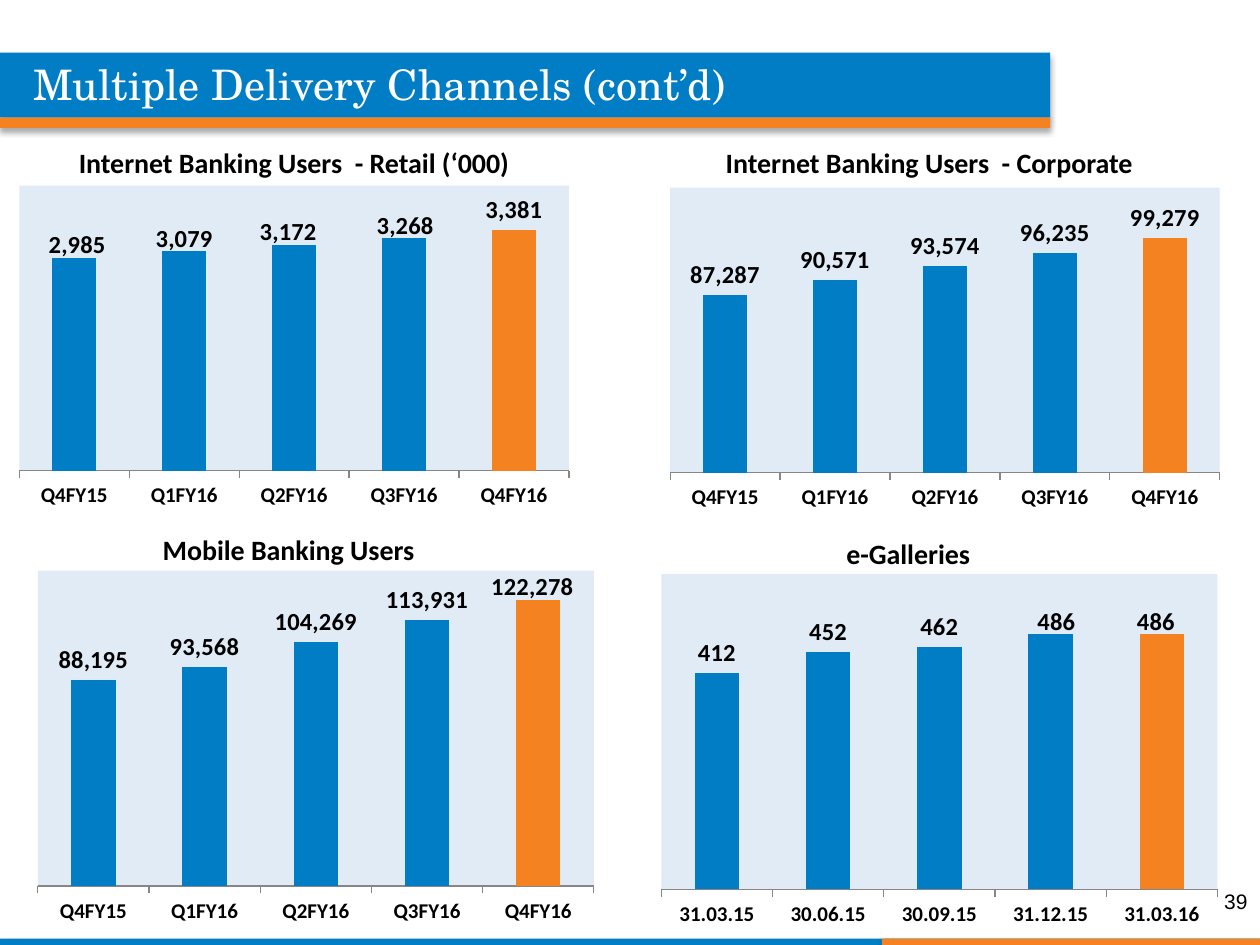
from dataclasses import dataclass

from lxml import etree
from pptx import Presentation
from pptx.chart.data import CategoryChartData
from pptx.dml.color import RGBColor
from pptx.enum.chart import XL_CHART_TYPE, XL_LABEL_POSITION, XL_TICK_MARK
from pptx.enum.shapes import MSO_SHAPE
from pptx.enum.text import MSO_ANCHOR, PP_ALIGN
from pptx.oxml import parse_xml
from pptx.oxml.ns import nsdecls, qn
from pptx.util import Cm, Pt

COLUMNS = XL_CHART_TYPE.COLUMN_CLUSTERED
OUTSIDE_END = XL_LABEL_POSITION.OUTSIDE_END
TICK_OUT, TICK_NONE = XL_TICK_MARK.OUTSIDE, XL_TICK_MARK.NONE
RECTANGLE = MSO_SHAPE.RECTANGLE
TOP, MIDDLE = MSO_ANCHOR.TOP, MSO_ANCHOR.MIDDLE
LEFT, CENTER, RIGHT = PP_ALIGN.LEFT, PP_ALIGN.CENTER, PP_ALIGN.RIGHT


@dataclass(frozen=True)
class Theme:
    blue: RGBColor = RGBColor(0x00, 0x7D, 0xC5)
    orange: RGBColor = RGBColor(0xF5, 0x82, 0x20)
    pale: str = "E0EBF6"
    axis: RGBColor = RGBColor(0x86, 0x86, 0x86)
    black: RGBColor = RGBColor(0, 0, 0)
    white: RGBColor = RGBColor(0xFF, 0xFF, 0xFF)
    title_font: str = "TeX Gyre Schola"
    body_font: str = "Calibri"
    number_font: str = "Arial"
    title_size: Pt = Pt(24)
    heading_size: Pt = Pt(16)
    chart_size: Pt = Pt(18)
    label_size: Pt = Pt(14)
    small_size: Pt = Pt(12)


theme = Theme()
NUMBER_FORMAT = '_ * #,##0_ ;_ * \\-#,##0_ ;_ * "-"??_ ;_ '
SHADOW = (
    f'<a:effectLst {nsdecls("a")}><a:outerShdw blurRad="44450" dist="27940" dir="5400000" '
    'algn="ctr" rotWithShape="0"><a:srgbClr val="000000"><a:alpha val="32000"/></a:srgbClr>'
    '</a:outerShdw></a:effectLst>'
)


def add_text(page, text, left, top, width, height, font, size, color, align, anchor, bold=False):
    box = page.shapes.add_textbox(Cm(left), Cm(top), Cm(width), Cm(height))
    box.text_frame.word_wrap = True
    box.text_frame.vertical_anchor = anchor
    paragraph = box.text_frame.paragraphs[0]
    paragraph.text = text
    paragraph.alignment = align
    paragraph.font.name = font
    paragraph.font.size = size
    paragraph.font.bold = bold
    paragraph.font.color.rgb = color


def make_layout(**values):
    """Manual chart layout; keyword names are the layout's child elements."""
    layout = parse_xml(f'<c:layout {nsdecls("c")}><c:manualLayout/></c:layout>')
    for name, value in values.items():
        etree.SubElement(layout[0], qn(f"c:{name}")).set("val", str(value))
    return layout


deck = Presentation()
deck.slide_width, deck.slide_height = Cm(25.4), Cm(19.05)
page = deck.slides.add_slide(deck.slide_layouts[6])

# Footer stripe and title banner
bars = [
    (0, 18.92, 25.4, 0.13, theme.blue),
    (17.78, 18.92, 7.62, 0.13, theme.orange),
    (0, 1.06, 21.17, 1.31, theme.blue),
    (0, 2.37, 21.17, 0.21, theme.orange),
]
for left, top, width, height, color in bars:
    bar = page.shapes.add_shape(RECTANGLE, Cm(left), Cm(top), Cm(width), Cm(height))
    bar.fill.solid()
    bar.fill.fore_color.rgb = color
    bar.line.fill.background()
    bar._element.spPr.append(parse_xml(SHADOW))

add_text(page, "Multiple Delivery Channels (cont’d)", 0.42, 1.06, 17.15, 1.27,
         theme.title_font, theme.title_size, theme.white, LEFT, TOP)

# Panels: heading box, chart box, plot area, value scale, data, label nudges
quarters = ["Q4FY15", "Q1FY16", "Q2FY16", "Q3FY16", "Q4FY16"]
dates = ["31.03.15", "30.06.15", "30.09.15", "31.12.15", "31.03.16"]
upper_plot = (0.033, 0.046, 0.935, 0.755)
lower_plot = (0.018, 0.109, 0.946, 0.751)
panels = [
    ("Internet Banking Users  - Retail (‘000)", (1.06, 2.75, 9.74, 1.06),
     (0, 3.39, 11.85, 7.62), upper_plot, (0, 4000, 1000),
     quarters, (2985, 3079, 3172, 3268, 3381),
     {0: (0.005, 0.02), 1: (0, 0.02), 2: (-0.01, 0.02), 3: (0.002, 0.023)}),
    ("Internet Banking Users  - Corporate", (13.55, 2.75, 10.37, 1.06),
     (13.12, 3.43, 11.85, 7.62), upper_plot, (50000, 110000, 10000),
     quarters, (87287, 90571, 93574, 96235, 99279), {}),
    ("Mobile Banking Users", (2.54, 10.64, 6.56, 0.85),
     (0.55, 10.58, 11.85, 8.47), lower_plot, (0, 135000, 50000),
     quarters, (88195, 93568, 104269, 113931, 122278), {4: (-0.01, 0.017)}),
    ("e-Galleries", (15.03, 10.72, 6.56, 0.85),
     (13.12, 10.65, 11.85, 8.47), lower_plot, (0, 600, 100),
     dates, (412, 452, 462, 486, 486), {3: (0.01, 0.02), 4: (-0.01, 0.02)}),
]

for heading, heading_box, chart_box, plot_box, scale, categories, values, nudges in panels:
    data = CategoryChartData(number_format=NUMBER_FORMAT)
    data.categories = categories
    data.add_series("Series 1", values)
    chart = page.shapes.add_chart(COLUMNS, *map(Cm, chart_box), data).chart
    chart.has_legend = False
    chart.has_title = False
    chart.font.name = theme.body_font
    chart.font.size = theme.chart_size
    chart.font.color.rgb = theme.black

    # Axes
    value_axis = chart.value_axis
    value_axis.minimum_scale, value_axis.maximum_scale, value_axis.major_unit = scale
    value_axis.has_major_gridlines = False
    value_axis.visible = False
    category_axis = chart.category_axis
    category_axis.major_tick_mark = TICK_OUT
    category_axis.minor_tick_mark = TICK_NONE
    category_axis.format.line.color.rgb = theme.axis
    category_axis.tick_labels.font.size = theme.small_size
    category_axis.tick_labels.font.bold = True

    # Columns, the latest one highlighted
    plot = chart.plots[0]
    plot.gap_width = 150
    plot.vary_by_categories = False
    series = plot.series[0]
    series.format.fill.solid()
    series.format.fill.fore_color.rgb = theme.blue
    latest = series.points[len(values) - 1].format.fill
    latest.solid()
    latest.fore_color.rgb = theme.orange

    # Value labels, some moved slightly
    labels = series.data_labels
    labels.show_value = True
    labels.position = OUTSIDE_END
    labels.number_format = NUMBER_FORMAT
    labels.number_format_is_linked = False
    labels.font.size = theme.label_size
    labels.font.bold = True
    for index, (shift_x, shift_y) in nudges.items():
        label = series.points[index].data_label
        label.font.size = theme.label_size
        label.font.bold = True
        label.position = OUTSIDE_END
        element = series._element.xpath(f"c:dLbls/c:dLbl[c:idx/@val='{index}']")[0]
        element.insert(1, make_layout(x=shift_x, y=shift_y))
        number = etree.Element(qn("c:numFmt"), formatCode=NUMBER_FORMAT, sourceLinked="0")
        element.insert(2, number)

    # Plot area position and background
    area = chart._chartSpace.chart.plotArea
    for old_layout in area.findall(qn("c:layout")):
        area.remove(old_layout)
    left, top, width, height = plot_box
    area.insert(0, make_layout(layoutTarget="inner", xMode="edge", yMode="edge",
                               x=left, y=top, w=width, h=height))
    area.append(parse_xml(
        f'<c:spPr {nsdecls("c", "a")}><a:solidFill><a:srgbClr val="{theme.pale}"/>'
        '</a:solidFill></c:spPr>'))
    chart._chartSpace.chart.addnext(parse_xml(
        f'<c:spPr {nsdecls("c", "a")}><a:noFill/><a:ln><a:noFill/></a:ln></c:spPr>'))

    add_text(page, heading, *heading_box, theme.body_font, theme.heading_size,
             theme.black, CENTER, MIDDLE, bold=True)

# Page number
add_text(page, "39", 24.33, 17.78, 1.07, 1.02, theme.number_font, theme.small_size,
         theme.black, RIGHT, TOP)

deck.save("out.pptx")
